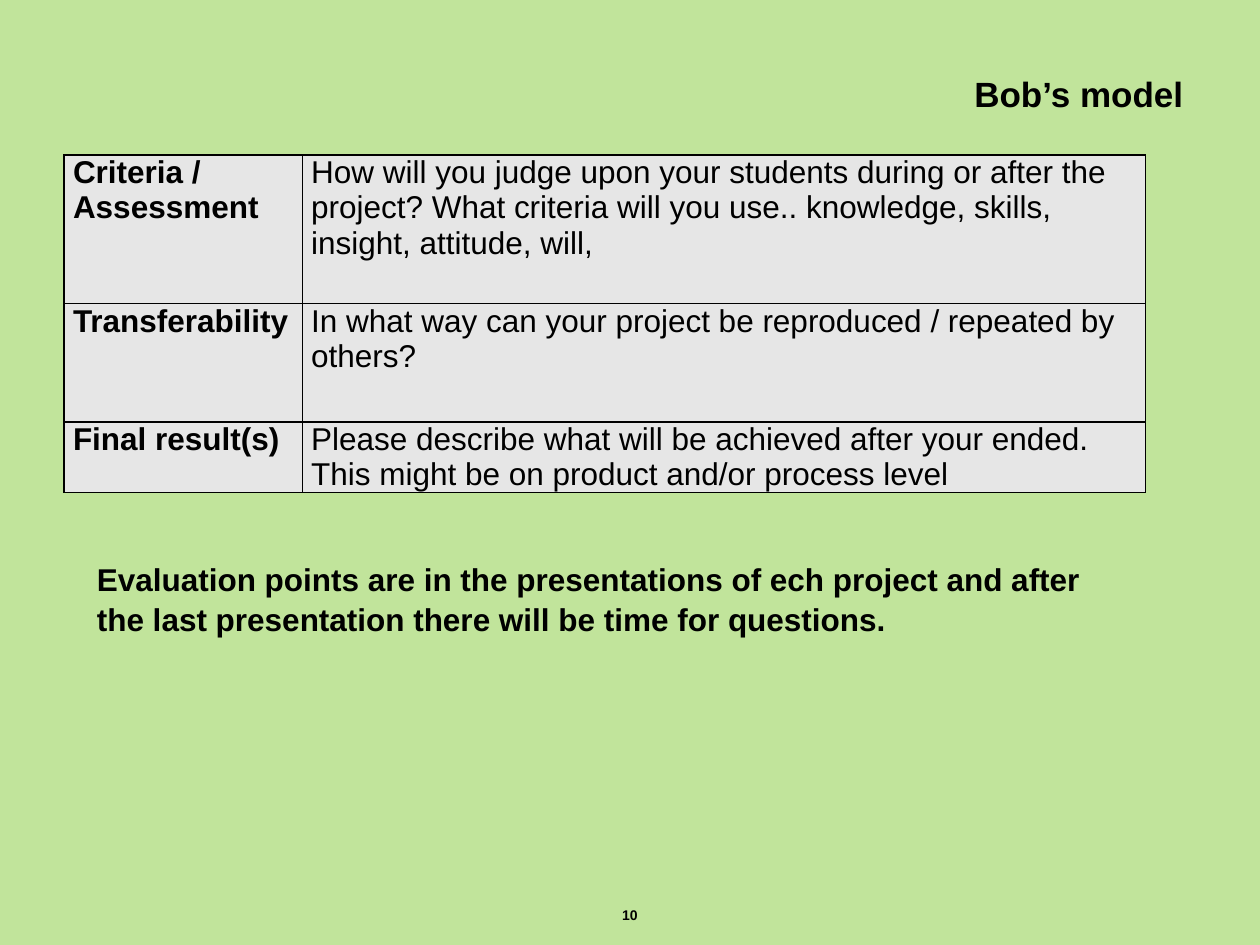
import dataclasses
from typing import Any

import pptx
import pptx.dml.color
import pptx.enum.text
import pptx.oxml
import pptx.oxml.ns
import pptx.util

ALIGN = pptx.enum.text.PP_ALIGN
ANCHOR = pptx.enum.text.MSO_ANCHOR
RGB = pptx.dml.color.RGBColor.from_string


@dataclasses.dataclass(frozen=True)
class Theme:
    font: str = "Arial"
    ink: str = "000000"
    background: str = "C1E49B"
    cell: str = "E6E6E6"
    heading: int = 20
    body: int = 18
    footer: int = 8
    border: int = 1


@dataclasses.dataclass(frozen=True)
class Label:
    text: str
    left: float
    top: float
    width: float
    height: float
    size: int
    paragraph: dict[str, Any]
    anchor: Any = ANCHOR.TOP


@dataclasses.dataclass(frozen=True)
class Criterion:
    topic: str
    question: str
    height: float


THEME = Theme()
WIDTH, HEIGHT = pptx.util.Inches(10), pptx.util.Inches(7.5)
TABLE_LEFT, TABLE_TOP = 0.51, 1.23
COLUMNS = (1.89, 6.69)

LABELS = (
    Label("Bob’s model", 0.28, 0.07, 0.669, 0.052, THEME.heading,
          {"alignment": ALIGN.RIGHT}),
    Label("10", 0.051, 0.937, 0.898, 0.063, THEME.footer,
          {"alignment": ALIGN.CENTER}, ANCHOR.MIDDLE),
    Label("Evaluation points are in the presentations of ech project and after "
          "the last presentation there will be time for questions.",
          0.067, 0.584, 0.835, 0.095, THEME.body,
          {"alignment": ALIGN.LEFT, "line_spacing": 1.05}),
)
CRITERIA = (
    Criterion("Criteria / Assessment",
              "How will you judge upon your students during or after the project? "
              "What criteria will you use.. knowledge, skills, insight, attitude, will,",
              1.18),
    Criterion("Transferability",
              "In what way can your project be reproduced / repeated by others?",
              0.94),
    Criterion("Final result(s)",
              "Please describe what will be achieved after your ended.\v"
              "This might be on product and/or process level",
              0.56),
)


def assign(target: Any, values: dict[str, Any]) -> None:
    """Set each named attribute on the target."""
    for name, value in values.items():
        setattr(target, name, value)


def write(paragraph: Any, text: str, size: int, bold: bool) -> None:
    """Write text into a paragraph in the theme's font."""
    paragraph.text = text
    assign(paragraph.font, {"name": THEME.font, "size": pptx.util.Pt(size), "bold": bold})
    paragraph.font.color.rgb = RGB(THEME.ink)


def draw_label(slide: Any, label: Label) -> None:
    """Draw a bold text box placed by shares of the slide."""
    frame = slide.shapes.add_textbox(
        round(label.left * WIDTH), round(label.top * HEIGHT),
        round(label.width * WIDTH), round(label.height * HEIGHT)).text_frame
    assign(frame, {"word_wrap": True, "vertical_anchor": label.anchor})
    write(frame.paragraphs[0], label.text, label.size, True)
    assign(frame.paragraphs[0], label.paragraph)


def draw_borders(cell: Any) -> None:
    """Line all four sides of a table cell."""
    properties = cell._tc.get_or_add_tcPr()
    for position, side in enumerate(("lnL", "lnR", "lnT", "lnB")):
        properties.insert(position, pptx.oxml.parse_xml(
            f'<a:{side} {pptx.oxml.ns.nsdecls("a")} w="{pptx.util.Pt(THEME.border)}">'
            f'<a:solidFill><a:srgbClr val="{THEME.ink}"/></a:solidFill></a:{side}>'))


def fill_cell(cell: Any, text: str, bold: bool) -> None:
    """Give a table cell its text, fill, margins and borders."""
    side = pptx.util.Inches(0.07)
    assign(cell, {"margin_left": side, "margin_right": side,
                  "margin_top": 0, "margin_bottom": 0})
    cell.fill.solid()
    cell.fill.fore_color.rgb = RGB(THEME.cell)
    write(cell.text_frame.paragraphs[0], text, THEME.body, bold)
    draw_borders(cell)


def draw_criteria(slide: Any, criteria: tuple[Criterion, ...]) -> None:
    """Draw the table of topics and their questions."""
    inches = pptx.util.Inches
    table = slide.shapes.add_table(
        len(criteria), len(COLUMNS), inches(TABLE_LEFT), inches(TABLE_TOP),
        inches(sum(COLUMNS)), inches(sum(item.height for item in criteria))).table
    assign(table, {"first_row": False, "horz_banding": False})
    for column, width in zip(table.columns, COLUMNS):
        column.width = inches(width)
    for row, criterion in zip(table.rows, criteria):
        row.height = inches(criterion.height)
        fill_cell(row.cells[0], criterion.topic, True)
        fill_cell(row.cells[1], criterion.question, False)


def main() -> None:
    """Build the slide and save it."""
    deck = pptx.Presentation()
    assign(deck, {"slide_width": WIDTH, "slide_height": HEIGHT})
    slide = deck.slides.add_slide(deck.slide_layouts[6])
    slide.background.fill.solid()
    slide.background.fill.fore_color.rgb = RGB(THEME.background)
    draw_criteria(slide, CRITERIA)
    for label in LABELS:
        draw_label(slide, label)
    deck.save("out.pptx")


if __name__ == "__main__":
    main()
